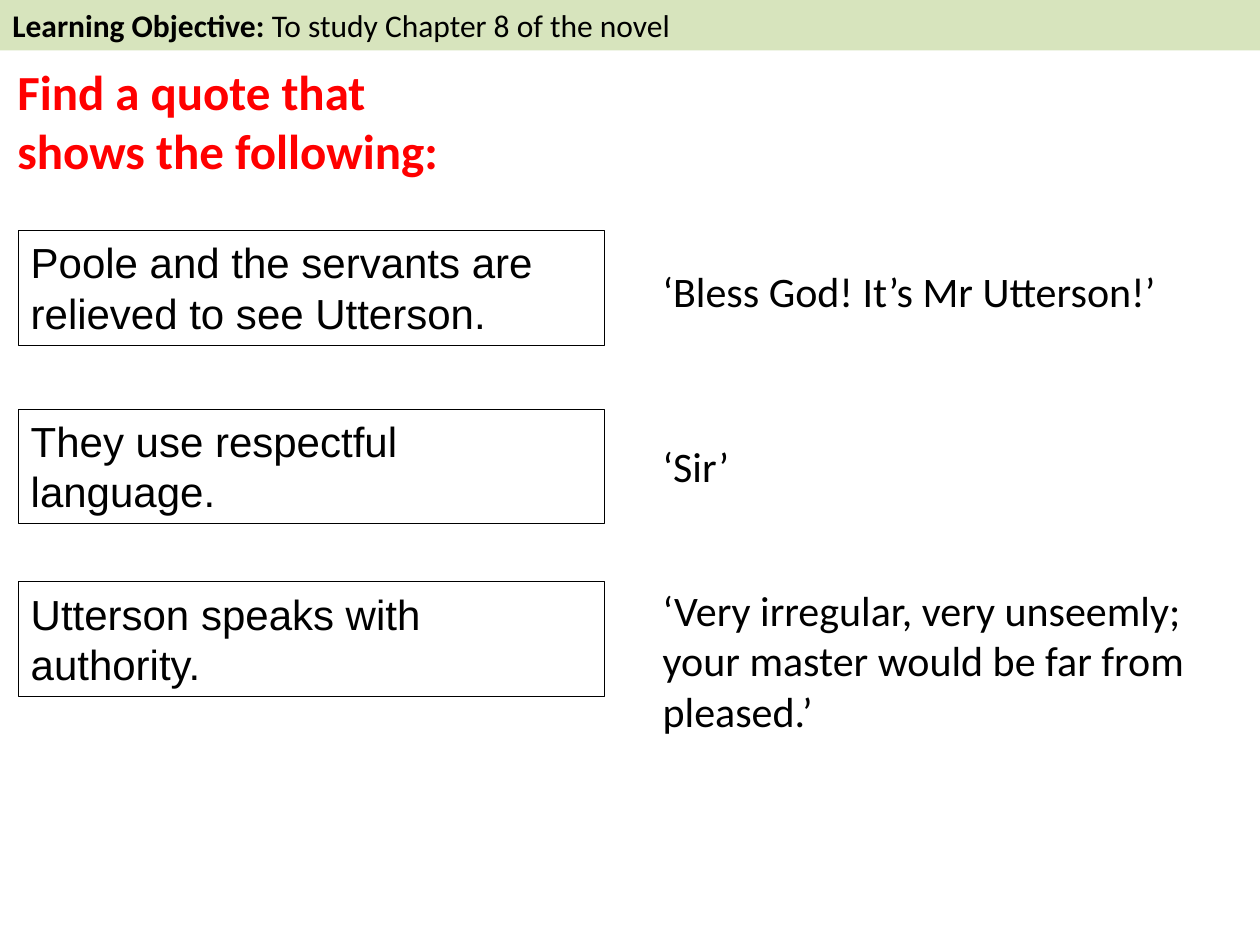
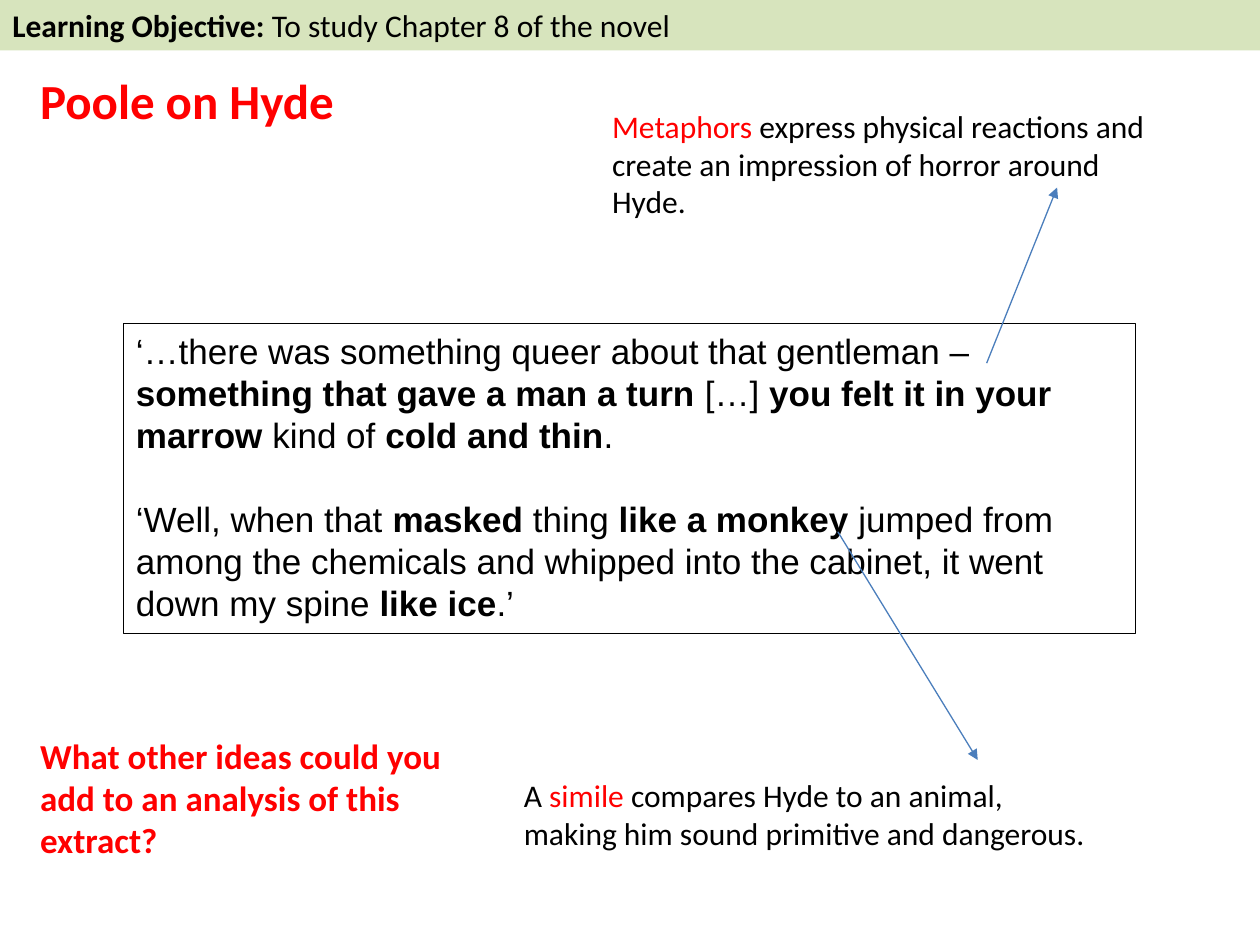
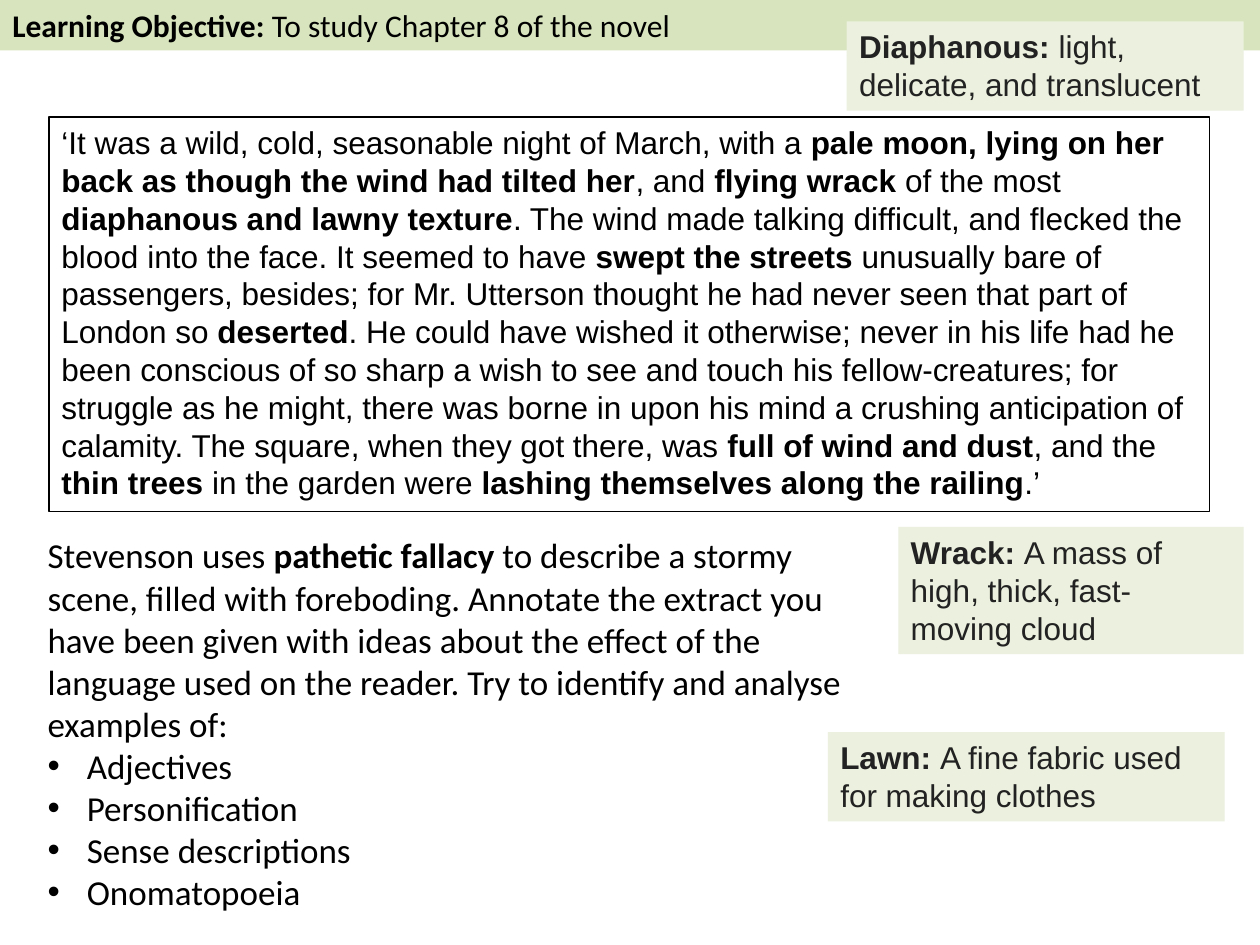
"""Build three lesson slides on Chapter 8 of the novel."""
from lxml.etree import SubElement
from pptx import Presentation
from pptx.dml.color import RGBColor
from pptx.enum.shapes import MSO_CONNECTOR, MSO_SHAPE
from pptx.enum.text import MSO_ANCHOR, MSO_AUTO_SIZE, PP_ALIGN
from pptx.oxml.ns import qn
from pptx.util import Cm, Pt

BLACK, RED, GREY = "000000", "FF0000", "222222"
BAND_GREEN, NOTE_GREEN, ARROW_BLUE = "D7E4BD", "EBF1DE", "4B7EBC"
OBJECTIVE = "*Learning Objective: *To study Chapter 8 of the novel"
BULLET = "• "


def rgb(value):
    """Turn a hex string into a colour."""
    return RGBColor.from_string(value)


def add_bullet(p):
    """Give a paragraph a hanging bullet."""
    pPr = p._p.get_or_add_pPr()
    pPr.set("marL", str(Cm(0.79)))
    pPr.set("indent", str(-Cm(0.79)))
    SubElement(pPr, qn("a:buFont"), typeface="Arial")
    SubElement(pPr, qn("a:buChar"), char=BULLET.strip())


def write(s, text, size, font, color=BLACK, accent=None, gap=0):
    """Write paragraphs; parts between asterisks are bold or accent coloured."""
    tf = s.text_frame
    tf.word_wrap = True
    tf.auto_size = MSO_AUTO_SIZE.SHAPE_TO_FIT_TEXT
    tf.vertical_anchor = MSO_ANCHOR.TOP
    for i, line in enumerate(text.split("\n")):
        p = tf.add_paragraph() if i else tf.paragraphs[0]
        p.alignment = PP_ALIGN.LEFT
        if i and gap:
            p.space_before = Pt(gap)
        if line.startswith(BULLET):
            add_bullet(p)
        for j, part in enumerate(line.removeprefix(BULLET).split("*")):
            if not part:
                continue
            marked = j % 2 == 1
            r = p.add_run()
            r.text = part
            r.font.name = font
            r.font.size = Pt(size)
            r.font.bold = marked and accent is None
            r.font.color.rgb = rgb(accent if marked and accent else color)


def add_text(slide, x, y, w, h, text, size, **style):
    """Add a plain Calibri text box."""
    s = slide.shapes.add_textbox(Cm(x), Cm(y), Cm(w), Cm(h))
    write(s, text, size, "Calibri", **style)


def add_box(slide, x, y, w, h, text, size, font="Arial", fill=None, **style):
    """Add a rectangle, filled without outline or outlined without fill."""
    s = slide.shapes.add_shape(MSO_SHAPE.RECTANGLE, Cm(x), Cm(y), Cm(w), Cm(h))
    s.shadow.inherit = False
    if fill:
        s.fill.solid()
        s.fill.fore_color.rgb = rgb(fill)
        s.line.fill.background()
    else:
        s.fill.background()
        s.line.color.rgb = rgb(BLACK)
        s.line.width = Pt(0.75)
    write(s, text, size, font, **style)


def add_definition(slide, x, y, w, h, text):
    """Add a pale green glossary note."""
    add_box(slide, x, y, w, h, text, 18, fill=NOTE_GREEN, color=GREY)


def add_arrow(slide, x1, y1, x2, y2):
    """Add a thin blue arrow."""
    s = slide.shapes.add_connector(
        MSO_CONNECTOR.STRAIGHT, Cm(x1), Cm(y1), Cm(x2), Cm(y2))
    s.line.color.rgb = rgb(ARROW_BLUE)
    s.line.width = Pt(0.75)
    SubElement(s.line._get_or_add_ln(), qn("a:tailEnd"), type="triangle")
    SubElement(s._element.spPr, qn("a:effectLst"))


def add_slide(prs):
    """Add a blank slide with the learning objective band."""
    slide = prs.slides.add_slide(prs.slide_layouts[6])
    add_box(slide, 0, 0, 25.4, 1.02, OBJECTIVE, 18, "Calibri", BAND_GREEN)
    return slide


def build_quote_hunt(prs):
    """Pair each statement with the quote that proves it."""
    slide = add_slide(prs)
    pairs = [
        (4.65, "Poole and the servants are relieved to see Utterson.",
         5.23, "‘Bless God! It’s Mr Utterson!’"),
        (8.25, "They use respectful language.", 8.76, "‘Sir’"),
        (11.73, "Utterson speaks with authority.", 11.66,
         "‘Very irregular, very unseemly; your master would be far from pleased.’"),
    ]
    for statement_y, statement, quote_y, quote in pairs:
        add_box(slide, 0.37, statement_y, 11.82, 2.31, statement, 24)
        add_text(slide, 13.11, quote_y, 11.99, 1.27, quote, 24)
    add_text(slide, 0.1, 1.12, 9.4, 2.64,
             "*Find a quote that shows the following:*", 28, color=RED)


def build_poole_on_hyde(prs):
    """Annotate Poole's description of Hyde."""
    slide = add_slide(prs)
    add_text(slide, 0.56, 1.3, 13.41, 1.45, "*Poole on Hyde*", 28, color=RED)
    add_box(slide, 2.49, 6.52, 20.4, 6.25,
            "‘…there was something queer about that gentleman – "
            "*something that gave a man a turn *[…] *you felt it in your marrow*"
            " kind of *cold and thin*.\n"
            "‘Well, when that *masked* thing *like a monkey *jumped from among "
            "the chemicals and whipped into the cabinet, it went down my spine "
            "*like ice*.’", 20, gap=24)
    add_text(slide, 12.09, 2.03, 11.4, 2.57,
             "*Metaphors* express physical reactions and create an impression "
             "of horror around Hyde.", 18, accent=RED)
    add_arrow(slide, 19.89, 7.32, 21.31, 3.78)
    add_text(slide, 10.31, 15.52, 11.99, 1.8,
             "A *simile* compares Hyde to an animal, making him sound "
             "primitive and dangerous.", 18, accent=RED)
    add_arrow(slide, 16.89, 10.72, 19.71, 15.32)
    add_text(slide, 0.56, 14.68, 8.94, 2.82,
             "*What other ideas could you add to an analysis of this extract?*",
             20, color=RED)


def build_pathetic_fallacy(prs):
    """Show the stormy extract, the task and the glossary."""
    slide = add_slide(prs)
    add_box(slide, 0.99, 2.36, 23.39, 7.95,
            "‘It was a wild, cold, seasonable night of March, with a "
            "*pale moon, lying on her back as though the wind had tilted her*, "
            "and *flying wrack* of the most *diaphanous and lawny texture*. "
            "The wind made talking difficult, and flecked the blood into the "
            "face. It seemed to have *swept the streets *unusually bare of "
            "passengers, besides; for Mr. Utterson thought he had never seen "
            "that part of London so *deserted*. He could have wished it "
            "otherwise; never in his life had he been conscious of so sharp a "
            "wish to see and touch his fellow-creatures; for struggle as he "
            "might, there was borne in upon his mind a crushing anticipation "
            "of calamity. The square, when they got there, was *full of wind "
            "and dust*, and the *thin trees *in the garden were *lashing "
            "themselves along the railing*.’", 18)
    examples = ["Adjectives", "Personification", "Sense descriptions", "Onomatopoeia"]
    task = ("Stevenson uses *pathetic fallacy* to describe a stormy scene, "
            "filled with foreboding. Annotate the extract you have been given "
            "with ideas about the effect of the language used on the reader. "
            "Try to identify and analyse examples of:")
    add_text(slide, 0.71, 10.64, 17.4, 7.95,
             "\n".join([task] + [BULLET + e for e in examples]), 20)
    add_definition(slide, 18.11, 10.62, 6.96, 2.57,
                   "*Wrack: *A mass of high, thick, fast-moving cloud")
    add_definition(slide, 17.07, 0.43, 8, 1.8,
                   "*Diaphanous: *light, delicate, and translucent")
    add_definition(slide, 16.69, 14.76, 8, 1.8,
                   "*Lawn: *A fine fabric used for making clothes")


def main():
    """Build and save the presentation."""
    prs = Presentation()
    prs.slide_width, prs.slide_height = Cm(25.4), Cm(19.05)
    build_quote_hunt(prs)
    build_poole_on_hyde(prs)
    build_pathetic_fallacy(prs)
    prs.save("out.pptx")


if __name__ == "__main__":
    main()
